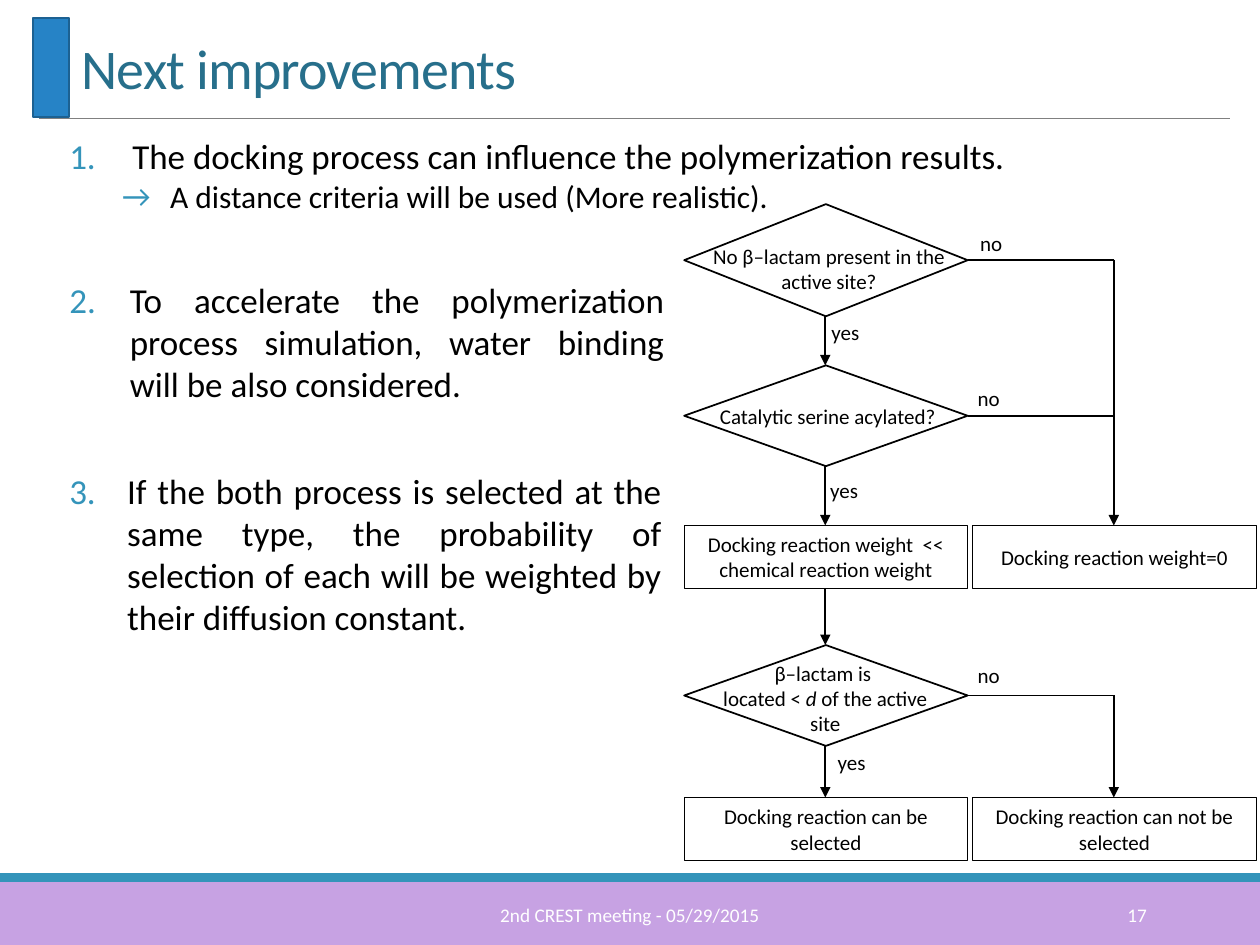
from dataclasses import dataclass

from lxml import etree
from pptx import Presentation
from pptx.dml.color import RGBColor
from pptx.enum.shapes import MSO_CONNECTOR, MSO_SHAPE
from pptx.enum.text import MSO_ANCHOR, PP_ALIGN
from pptx.oxml.ns import qn
from pptx.util import Inches, Pt

RECT, DIAMOND = MSO_SHAPE.RECTANGLE, MSO_SHAPE.DIAMOND
LINE = MSO_CONNECTOR.STRAIGHT
TOP, MIDDLE, BOTTOM = MSO_ANCHOR.TOP, MSO_ANCHOR.MIDDLE, MSO_ANCHOR.BOTTOM
LEFT, CENTER, RIGHT, JUSTIFY = (
    PP_ALIGN.LEFT, PP_ALIGN.CENTER, PP_ALIGN.RIGHT, PP_ALIGN.JUSTIFY)


@dataclass(frozen=True)
class Theme:
    font: str = "Calibri"
    title: str = "276F8B"
    accent: str = "3494BA"
    footer: str = "C7A2E3"
    tab: str = "2683C6"
    tab_line: str = "1C6192"
    rule: str = "808080"
    black: str = "000000"
    white: str = "FFFFFF"
    title_size: int = 32
    body_size: int = 20
    sub_size: int = 18
    chart_size: int = 12
    footer_size: int = 11


theme = Theme()
prs = Presentation()
prs.slide_width, prs.slide_height = Inches(10), Inches(7.5)
s = prs.slides.add_slide(prs.slide_layouts[6])


def add_block(box, lines=(), size=theme.chart_size, color=theme.black,
              align=CENTER, preset=None, fill=None, line=None, **frame):
    """Add a preset shape or a text box; a line is a string or a list of (text, italic)."""
    at = [Inches(v) for v in box]
    if preset is None:
        sp = s.shapes.add_textbox(*at)
    else:
        sp = s.shapes.add_shape(preset, *at)
        sp.shadow.inherit = False
        if fill:
            sp.fill.solid()
            sp.fill.fore_color.rgb = RGBColor.from_string(fill)
        else:
            sp.fill.background()
        if line:
            sp.line.color.rgb = RGBColor.from_string(line[0])
            sp.line.width = Pt(line[1])
        else:
            sp.line.fill.background()
    tf = sp.text_frame
    for name, value in {"word_wrap": True, **frame}.items():
        setattr(tf, name, value)
    for i, runs in enumerate(lines):
        p = tf.paragraphs[0] if i == 0 else tf.add_paragraph()
        p.alignment = align
        for text, italic in [(runs, None)] if isinstance(runs, str) else runs:
            r = p.add_run()
            r.text = text
            look = {"name": theme.font, "size": Pt(size), "italic": italic}
            for name, value in look.items():
                setattr(r.font, name, value)
            r.font.color.rgb = RGBColor.from_string(color)
    return tf


def add_line(start, end, color=theme.black, width=1, arrow=False):
    c = s.shapes.add_connector(LINE, *[Inches(v) for v in (*start, *end)])
    c.line.color.rgb = RGBColor.from_string(color)
    c.line.width = Pt(width)
    if arrow:
        etree.SubElement(c.line._get_or_add_ln(), qn("a:tailEnd"), type="triangle")
    etree.SubElement(c._element.spPr, qn("a:effectLst"))


# Footer, title and rule
add_block((0, 7, 10, 0.5), preset=RECT, fill=theme.footer)
add_block((0, 6.93, 10, 0.07), preset=RECT, fill=theme.accent)
add_line((0.31, 0.94), (9.76, 0.94), theme.rule, 0.5)
add_block((0.26, 0.14, 0.29, 0.79), preset=RECT, fill=theme.tab,
          line=(theme.tab_line, 1.25))
tf = add_block((0.55, 0.31, 8.96, 0.54), ["Next improvements"], theme.title_size,
               theme.title, LEFT, vertical_anchor=BOTTOM)
p = tf.paragraphs[0]
p.line_spacing = 0.85
p.runs[0].font._element.set("spc", "-50")
for box, text, align in [
    ((3.02, 7.06, 3.96, 0.4), "2nd CREST meeting - 05/29/2015", CENTER),
    ((8.12, 7.06, 1.08, 0.4), "17", RIGHT),
]:
    add_block(box, [text], theme.footer_size, theme.white, align,
              vertical_anchor=MIDDLE)

# Numbered points: box, text, size, hanging indent, left margin, bullet
points = [
    ((0.55, 1.02, 8.96, 0.4), theme.body_size, 0.5, 0.5, 1,
     "The docking process can influence the polymerization results."),
    ((0.55, 1.36, 8.96, 0.4), theme.sub_size, 0.38, 0.8, "→",
     "A distance criteria will be used (More realistic)."),
    ((0.55, 2.16, 4.82, 1.11), theme.body_size, 0.48, 0.48, 2,
     "To accelerate the polymerization process simulation, water binding "
     "will be also considered."),
    ((0.55, 3.68, 4.8, 1.45), theme.body_size, 0.46, 0.46, 3,
     "If the both process is selected at the same type, the probability of "
     "selection of each will be weighted by their diffusion constant."),
]
for box, size, hang, margin, bullet, text in points:
    tf = add_block(box, [text], size, align=JUSTIFY, margin_left=0)
    pPr = tf.paragraphs[0]._p.get_or_add_pPr()
    pPr.set("marL", str(Inches(margin)))
    pPr.set("indent", str(-Inches(hang)))
    clr = etree.SubElement(pPr, qn("a:buClr"))
    etree.SubElement(clr, qn("a:srgbClr"), val=theme.accent)
    etree.SubElement(pPr, qn("a:buFont"), typeface=theme.font)
    if isinstance(bullet, int):
        etree.SubElement(pPr, qn("a:buAutoNum"), type="arabicPeriod",
                         startAt=str(bullet))
    else:
        etree.SubElement(pPr, qn("a:buChar"), char=bullet)

# Flowchart: yes column on the left, no column on the right
YES_X, NO_X = 6.55, 8.84
NODE_W, BOX_H = 2.25, 0.5
YES_LEFT, NO_LEFT = 5.43, 7.72
YES_RIGHT = YES_LEFT + NODE_W

decisions = [  # diamond top and height, question box, question
    (1.62, 0.89, (5.56, 1.88, 2.04, 0.5),
     ["No β–lactam present in the active site?"]),
    (2.9, 0.8, (5.55, 3.15, 2.04, 0.3), ["Catalytic serine acylated?"]),
    (5.12, 0.8, (5.53, 5.19, 2.04, 0.71),
     ["β–lactam is ",
      [("located < ", None), ("d", True), (" of the active site", None)]]),
]
for top, height, box, question in decisions:
    add_block((YES_LEFT, top, NODE_W, height), preset=DIAMOND,
              line=(theme.black, 1))
    add_block(box, question)
    middle = top + height / 2
    add_line((YES_RIGHT, middle), (NO_X, middle))

outcomes = [
    (YES_LEFT, 4.17, "Docking reaction weight  << chemical reaction weight"),
    (NO_LEFT, 4.17, "Docking reaction weight=0"),
    (YES_LEFT, 6.33, "Docking reaction can be selected"),
    (NO_LEFT, 6.33, "Docking reaction can not be selected"),
]
for left, top, text in outcomes:
    add_block((left, top, NODE_W, BOX_H), [text], preset=RECT,
              line=(theme.black, 0.75), vertical_anchor=MIDDLE)

for x, start, end in [
    (YES_X, 2.51, 2.9), (YES_X, 3.7, 4.17), (YES_X, 4.67, 5.12),
    (YES_X, 5.92, 6.33), (NO_X, 2.06, 4.17), (NO_X, 5.52, 6.33),
]:
    add_line((x, start), (x, end), arrow=True)

for x, y, answer in [
    (6.5, 2.49, "yes"), (6.49, 3.74, "yes"), (6.55, 5.9, "yes"),
    (7.68, 1.78, "no"), (7.66, 3.01, "no"), (7.66, 5.21, "no"),
]:
    add_block((x, y, 0.49, 0.3), [answer], align=LEFT)

prs.save("out.pptx")
